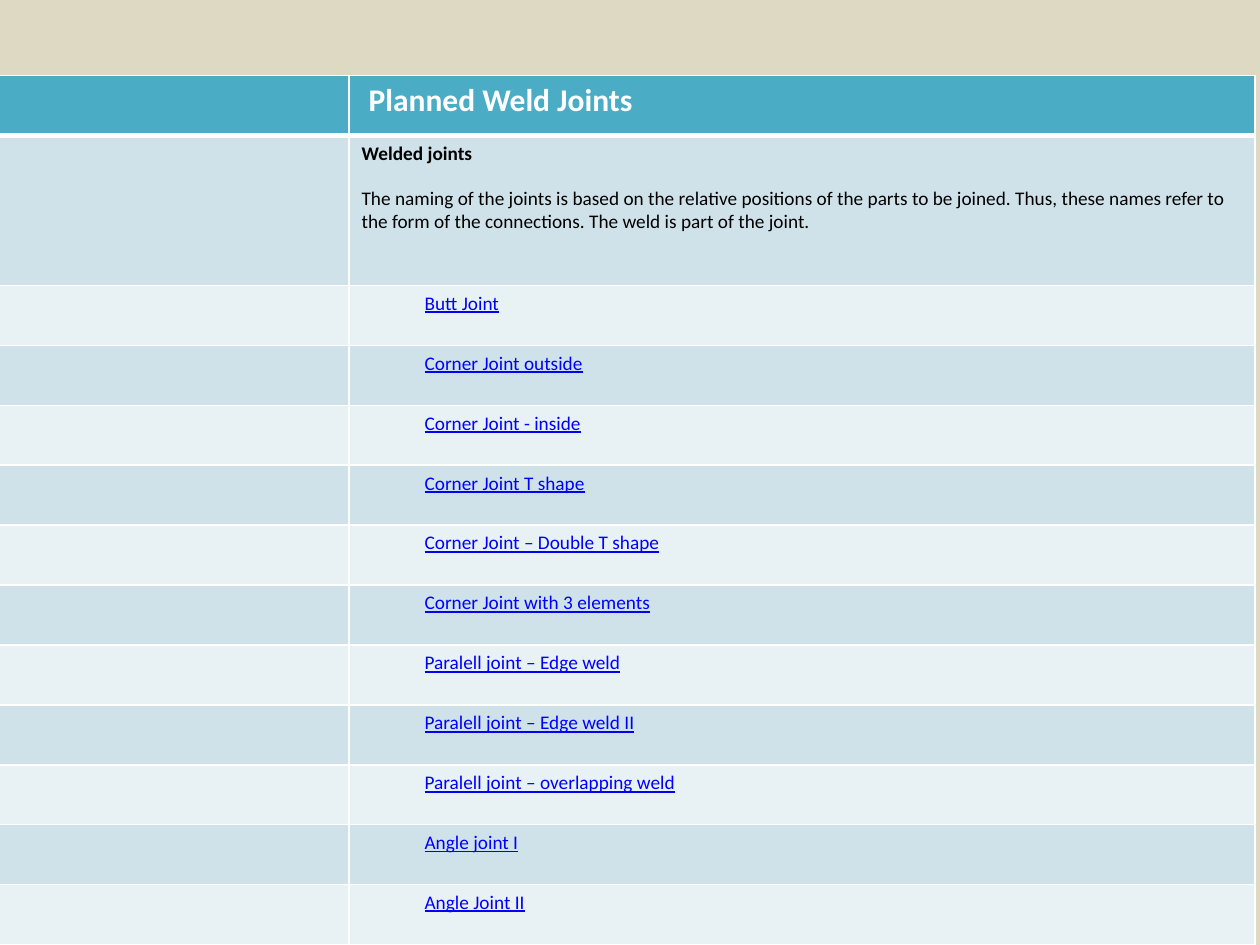
from lxml.etree import SubElement
from pptx import Presentation
from pptx.dml.color import RGBColor
from pptx.oxml.ns import qn
from pptx.util import Inches, Pt

WHITE = RGBColor(0xFF, 0xFF, 0xFF)
BLACK = RGBColor(0, 0, 0)
LINK_BLUE = RGBColor(0, 0, 0xFF)
SAND = RGBColor(0xDD, 0xD9, 0xC3)
TEAL = RGBColor(0x4B, 0xAC, 0xC6)
BAND_DARK = RGBColor(0xCF, 0xE2, 0xEA)
BAND_LIGHT = RGBColor(0xE8, 0xF1, 0xF4)

THIN, THICK = 0.96, 3
TABLE_HEIGHT, INTRO_HEIGHT = 6.9, 1.19
COLUMN_WIDTHS = (2.81, 7.19)

HEADING = " Planned Weld Joints"
INTRO_TITLE = "Welded joints"
INTRO_TEXT = (
    "The naming of the joints is based on the relative positions of the parts "
    "to be joined. Thus, these names refer to the form of the connections. "
    "The weld is part of the joint."
)
JOINTS = (
    "Butt Joint",
    "Corner Joint outside",
    "Corner Joint - inside",
    "Corner Joint T shape",
    "Corner Joint – Double T shape",
    "Corner Joint with 3 elements",
    "Paralell joint – Edge weld",
    "Paralell joint – Edge weld II",
    "Paralell joint – overlapping weld",
    "Angle joint I",
    "Angle Joint II",
)


def set_borders(cell, top, bottom):
    properties = cell._tc.get_or_add_tcPr()
    for side, width in (("L", THIN), ("R", THIN), ("T", top), ("B", bottom)):
        line = SubElement(properties, qn(f"a:ln{side}"), w=str(Pt(width)))
        fill = SubElement(line, qn("a:solidFill"))
        SubElement(fill, qn("a:srgbClr"), val=str(WHITE))


def style_row(table, index):
    if index == 0:
        color = TEAL
    else:
        color = BAND_DARK if index % 2 else BAND_LIGHT
    for cell in table.rows[index].cells:
        set_borders(cell, THICK if index == 1 else THIN, THICK if index == 0 else THIN)
        cell.fill.solid()
        cell.fill.fore_color.rgb = color


def write_paragraph(paragraph, text, size, color, bold=False, underline=False):
    paragraph.text = text
    font = paragraph.runs[0].font
    font.name = "Calibri"
    font.size = Pt(size)
    font.bold = bold
    font.underline = underline
    font.color.rgb = color


def write_intro(cell):
    title = cell.text_frame.paragraphs[0]
    write_paragraph(title, INTRO_TITLE, 11, BLACK, bold=True)
    title.space_after = Pt(12)
    write_paragraph(cell.text_frame.add_paragraph(), INTRO_TEXT, 11, BLACK)


def write_joint(cell, name):
    paragraph = cell.text_frame.paragraphs[0]
    write_paragraph(paragraph, name, 11, LINK_BLUE, underline=True)
    properties = paragraph._p.get_or_add_pPr()
    properties.set("marL", str(Inches(0.5)))
    properties.set("indent", "0")


def add_joint_table(slide):
    row_count = len(JOINTS) + 2
    table = slide.shapes.add_table(
        row_count, 2, Inches(-0.04), Inches(0.6), Inches(10), Inches(TABLE_HEIGHT)
    ).table
    for column, width in zip(table.columns, COLUMN_WIDTHS):
        column.width = Inches(width)
    row_height = Inches((TABLE_HEIGHT - INTRO_HEIGHT) / (row_count - 1))
    for index, row in enumerate(table.rows):
        row.height = Inches(INTRO_HEIGHT) if index == 1 else row_height
        style_row(table, index)
    heading = table.cell(0, 1).text_frame.paragraphs[0]
    write_paragraph(heading, HEADING, 18, WHITE, bold=True)
    write_intro(table.cell(1, 1))
    for index, name in enumerate(JOINTS, start=2):
        write_joint(table.cell(index, 1), name)


def main():
    presentation = Presentation()
    presentation.slide_width = Inches(10)
    presentation.slide_height = Inches(7.5)
    slide = presentation.slides.add_slide(presentation.slide_layouts[6])
    slide.background.fill.solid()
    slide.background.fill.fore_color.rgb = SAND
    add_joint_table(slide)
    presentation.save("out.pptx")


if __name__ == "__main__":
    main()
